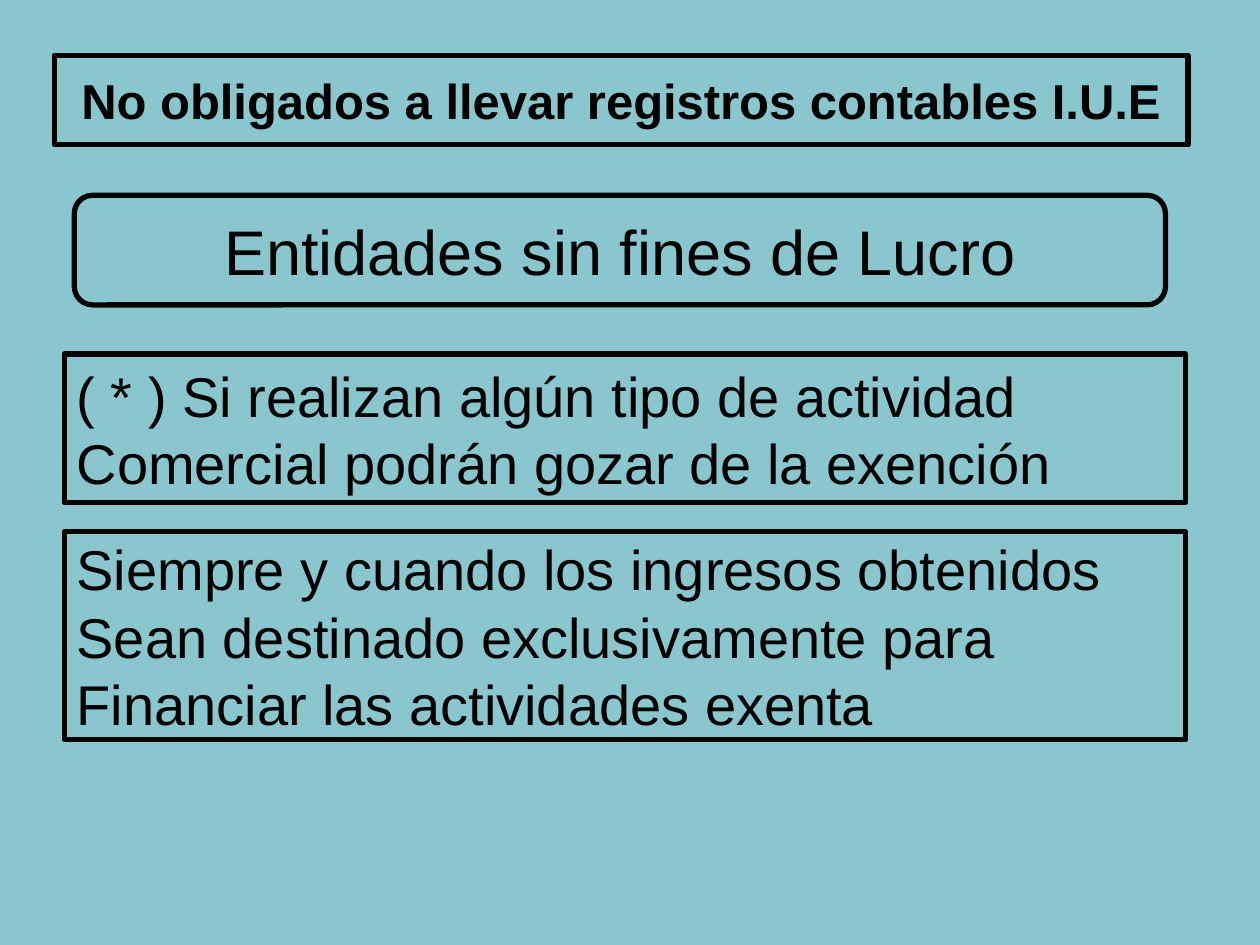
from pptx import Presentation
from pptx.dml.color import RGBColor
from pptx.enum import shapes, text
from pptx.util import Inches, Pt

BLACK = RGBColor(0x00, 0x00, 0x00)
AQUA = RGBColor(0x8A, 0xC6, 0xCD)
WIDTH, HEIGHT = Inches(10), Inches(7.5)
COLUMNS, ROWS = 100, 75  # grid of tenths of an inch


class OutlinedSlide:
    """Slide whose texts stand in unfilled, black-lined boxes."""
    font_name = "Arial"
    line_width = Pt(3)

    def __init__(self, deck):
        self.slide = deck.slides.add_slide(deck.slide_layouts[5])
        fill = self.slide.background.fill
        fill.solid()
        fill.fore_color.rgb = AQUA

    def area(self, left, top, columns, rows):
        column, row = WIDTH / COLUMNS, HEIGHT / ROWS
        return (round(left * column), round(top * row),
                round(columns * column), round(rows * row))

    def style(self, box, lines, size, align, bold=False, wrap=False):
        box.fill.background()
        box.line.color.rgb = BLACK
        box.line.width = self.line_width
        frame = box.text_frame
        frame.auto_size = text.MSO_AUTO_SIZE.NONE
        frame.word_wrap = wrap
        frame.vertical_anchor = text.MSO_ANCHOR.MIDDLE
        for index, line in enumerate(lines):
            paragraph = frame.add_paragraph() if index else frame.paragraphs[0]
            paragraph.alignment = align
            run = paragraph.add_run()
            run.text = line
            run.font.name = self.font_name
            run.font.size = Pt(size)
            run.font.bold = bold
            run.font.color.rgb = BLACK

    def title(self, area, line):
        heading = self.slide.shapes.title
        heading.left, heading.top, heading.width, heading.height = self.area(*area)
        self.style(heading, [line], 28, text.PP_ALIGN.CENTER, bold=True, wrap=True)

    def box(self, kind, area, lines, size, align):
        box = self.slide.shapes.add_shape(kind, *self.area(*area))
        box.shadow.inherit = False
        self.style(box, lines, size, align)

    def subject(self, area, line):
        self.box(shapes.MSO_SHAPE.ROUNDED_RECTANGLE, area, [line], 36,
                 text.PP_ALIGN.CENTER)

    def note(self, top, rows, lines):
        self.box(shapes.MSO_SHAPE.RECTANGLE, (5.1, top, 89, rows), lines, 32,
                 text.PP_ALIGN.LEFT)


def main():
    deck = Presentation()
    deck.slide_width, deck.slide_height = WIDTH, HEIGHT
    page = OutlinedSlide(deck)

    # Heading and subject
    page.title((4.3, 4.4, 90, 7.1), "No obligados a llevar registros contables I.U.E")
    page.subject((5.9, 15.5, 86.6, 8.7), "Entidades sin fines de Lucro")

    # Exemption and its condition
    page.note(28.1, 11.8, ["( * ) Si realizan algún tipo de actividad",
                           "Comercial podrán gozar de la exención"])
    page.note(42.2, 16.5, ["Siempre y cuando los ingresos obtenidos",
                           "Sean destinado exclusivamente para",
                           "Financiar las actividades exenta"])

    deck.save("out.pptx")


if __name__ == "__main__":
    main()
